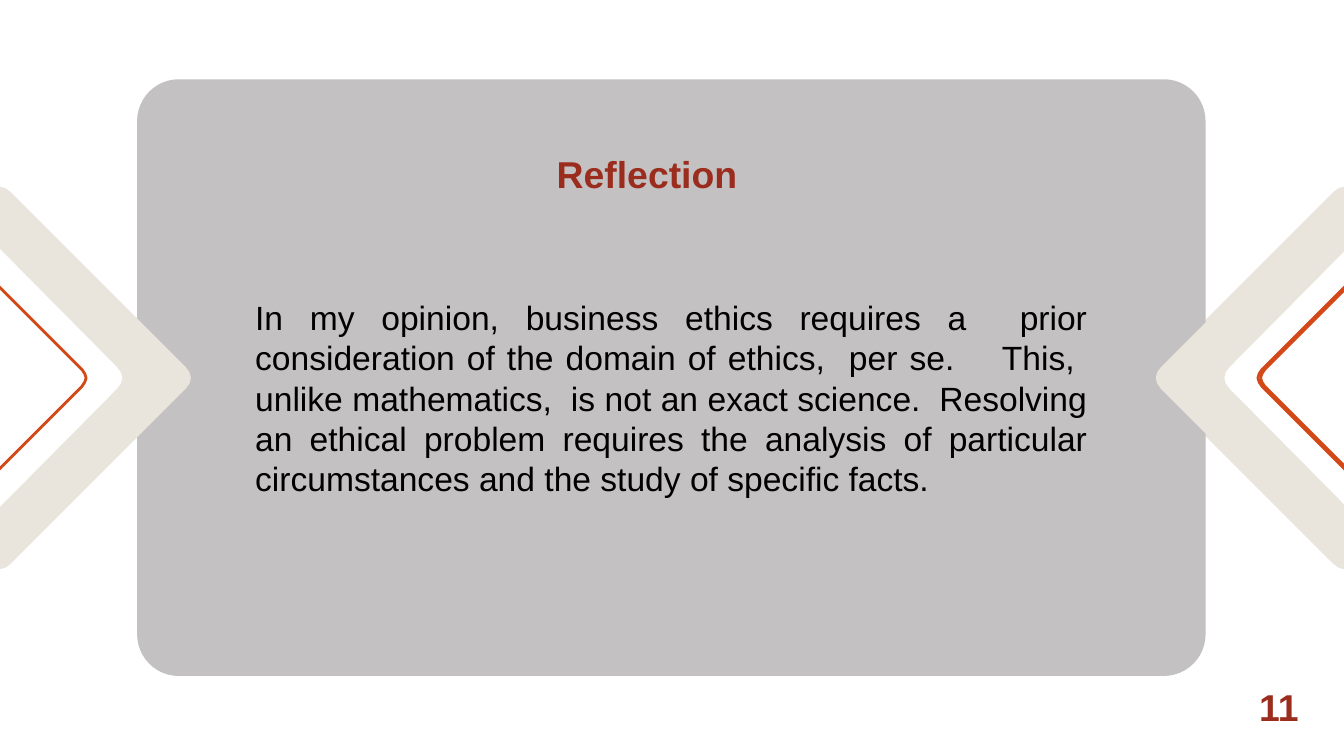
from pptx import Presentation
from pptx.dml.color import RGBColor
from pptx.enum.shapes import MSO_SHAPE
from pptx.enum.text import MSO_ANCHOR, PP_ALIGN
from pptx.util import Inches, Pt

ROUND = MSO_SHAPE.ROUNDED_RECTANGLE
MIDDLE = MSO_ANCHOR.MIDDLE
LEFT, CENTER, JUSTIFY = PP_ALIGN.LEFT, PP_ALIGN.CENTER, PP_ALIGN.JUSTIFY
COLORS = {"panel": "C3C1C1", "sand": "E9E5DC", "orange": "D34817",
          "red": "9B2D1F", "black": "000000"}
WIDE = 10
HIGH = WIDE * 9 / 16
BAND = [(1.42, 2.81), (1.41, 2.77), (1.38, 2.73), (0.08, 1.43), (0.04, 1.4),
        (0, 1.39), (-0.05, 1.4), (-0.09, 1.43), (-0.26, 1.59), (0.87, 2.73),
        (0.9, 2.77), (0.91, 2.81)]
TIP = [(0.64, 2.81), (0.63, 2.78), (0.61, 2.75), (-0.35, 1.79),
       (-0.38, 1.78), (-0.41, 1.77)]
BODY = ("In my opinion, business ethics requires a  prior consideration of "
        "the domain of ethics,  per se.    This,  unlike mathematics,  is not "
        "an exact science.  Resolving an ethical problem requires the "
        "analysis of particular circumstances and the study of specific facts.")

deck = Presentation()
deck.slide_width, deck.slide_height = Inches(WIDE), Inches(HIGH)
slide = deck.slides.add_slide(deck.slide_layouts[5])
shapes = slide.shapes
title = shapes.title


def add_arrow(sign, shift):
    for half in (BAND, TIP):
        ring = half + [(x, HIGH - y) for x, y in reversed(half)]
        points = [(Inches(shift + sign * x), Inches(y)) for x, y in ring]
        pen = shapes.build_freeform(*points[0])
        pen.add_line_segments(points[1:], close=True)
        arrow = pen.convert_to_shape()
        arrow.shadow.inherit = False
        if half is BAND:
            arrow.fill.solid()
            arrow.fill.fore_color.rgb = RGBColor.from_string(COLORS["sand"])
            arrow.line.fill.background()
        else:
            arrow.fill.background()
            arrow.line.color.rgb = RGBColor.from_string(COLORS["orange"])
            arrow.line.width = Pt(1.5)


def set_text(box, text, size, color, bold, align):
    frame = box.text_frame
    frame.word_wrap = True
    frame.text = text
    para = frame.paragraphs[0]
    para.alignment = align
    font = para.runs[0].font
    font.name, font.size, font.bold = "Arial", Pt(size), bold
    font.color.rgb = RGBColor.from_string(COLORS[color])


add_arrow(-1, WIDE)

panel = shapes.add_shape(ROUND, Inches(1.02), Inches(0.59), Inches(7.95), Inches(4.44))
panel.adjustments[0] = 0.07
panel.shadow.inherit = False
panel.fill.solid()
panel.fill.fore_color.rgb = RGBColor.from_string(COLORS["panel"])
panel.line.fill.background()

shapes._spTree.append(title._element)
title.left, title.top = Inches(3.86), Inches(0.84)
title.width, title.height = Inches(2.27), Inches(0.77)
set_text(title, "Reflection", 20, "red", True, CENTER)
frame = title.text_frame
frame.vertical_anchor = MIDDLE
frame.margin_left = frame.margin_bottom = Inches(0.1)
frame.margin_right, frame.margin_top = Inches(0.46), Inches(0.23)

add_arrow(1, 0)
add_arrow(-1, WIDE + 0.02)

body = shapes.add_textbox(Inches(1.8), Inches(2.16), Inches(6.39), Inches(1.62))
set_text(body, BODY, 18, "black", False, JUSTIFY)
number = shapes.add_textbox(Inches(9.27), Inches(5.04), Inches(0.53), Inches(0.44))
set_text(number, "11", 20, "red", True, LEFT)

deck.save("out.pptx")
